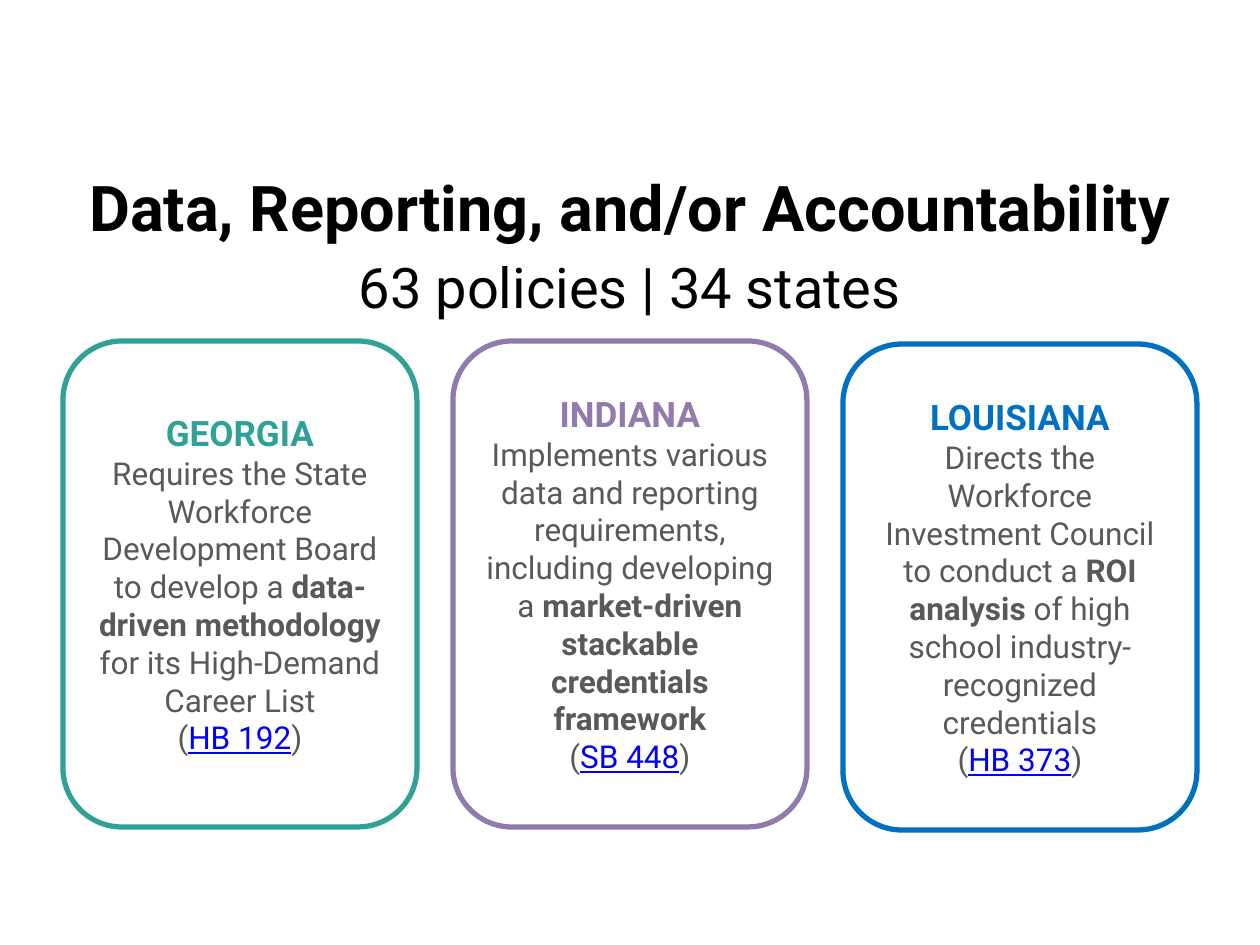
from pptx import Presentation
from pptx import util as u
from pptx.dml.color import RGBColor
from pptx.enum import shapes, text

SCALE = 914400 / 126
FONT = "Roboto"
BLACK = RGBColor(0x00, 0x00, 0x00)
WHITE = RGBColor(0xFF, 0xFF, 0xFF)
GRAY = RGBColor(0x58, 0x59, 0x5B)
LINK = RGBColor(0x00, 0x00, 0xFF)
TEAL = RGBColor(0x2F, 0xA1, 0x96)
PURPLE = RGBColor(0x92, 0x7A, 0xAE)
BLUE = RGBColor(0x00, 0x70, 0xC0)


def px(*lengths):
    return [u.Emu(round(length * SCALE)) for length in lengths]


def add_run(paragraph, words, size, color, bold=False, underline=False):
    paragraph.alignment = text.PP_ALIGN.CENTER
    run = paragraph.add_run()
    run.text = words
    run.font.name = FONT
    run.font.size = u.Pt(size)
    run.font.color.rgb = color
    run.font.bold = bold
    run.font.underline = underline


presentation = Presentation()
presentation.slide_width, presentation.slide_height = px(1260, 945)
slide = presentation.slides.add_slide(presentation.slide_layouts[6])

headings = [
    ("Data, Reporting, and/or Accountability", 136, 140, 36, True, text.MSO_ANCHOR.MIDDLE),
    ("63 policies | 34 states", 246, 82, 32, False, text.MSO_ANCHOR.TOP),
]
for words, top, height, size, bold, anchor in headings:
    frame = slide.shapes.add_textbox(*px(63, top, 1134, height)).text_frame
    frame.word_wrap = True
    frame.vertical_anchor = anchor
    add_run(frame.paragraphs[0], words, size, BLACK, bold)

cards = [
    ("GEORGIA", TEAL, 341,
     [("Requires the State Workforce Development Board to develop a ", False),
      ("data-driven methodology ", True),
      ("for its High-Demand Career List", False)], "HB 192"),
    ("INDIANA", PURPLE, 341,
     [("Implements various data and reporting requirements, including developing a ", False),
      ("market-driven stackable credentials framework", True)], "SB 448"),
    ("LOUISIANA", BLUE, 344,
     [("Directs the Workforce Investment Council to conduct a ", False),
      ("ROI analysis ", True),
      ("of high school industry-recognized credentials", False)], "HB 373"),
]
for index, (state, color, top, description, bill) in enumerate(cards):
    card = slide.shapes.add_shape(
        shapes.MSO_SHAPE.ROUNDED_RECTANGLE, *px(63 + 390 * index, top, 354, 486))
    card.shadow.inherit = False
    card.fill.solid()
    card.fill.fore_color.rgb = WHITE
    card.line.color.rgb = color
    card.line.width = u.Pt(3)

    frame = card.text_frame
    frame.word_wrap = True
    frame.vertical_anchor = text.MSO_ANCHOR.MIDDLE
    add_run(frame.paragraphs[0], state, 20, color, bold=True)

    paragraph = frame.add_paragraph()
    for words, bold in description:
        add_run(paragraph, words, 18, GRAY, bold)

    paragraph = frame.add_paragraph()
    add_run(paragraph, "(", 18, GRAY)
    add_run(paragraph, bill, 18, LINK, underline=True)
    add_run(paragraph, ")", 18, GRAY)

presentation.save("out.pptx")
